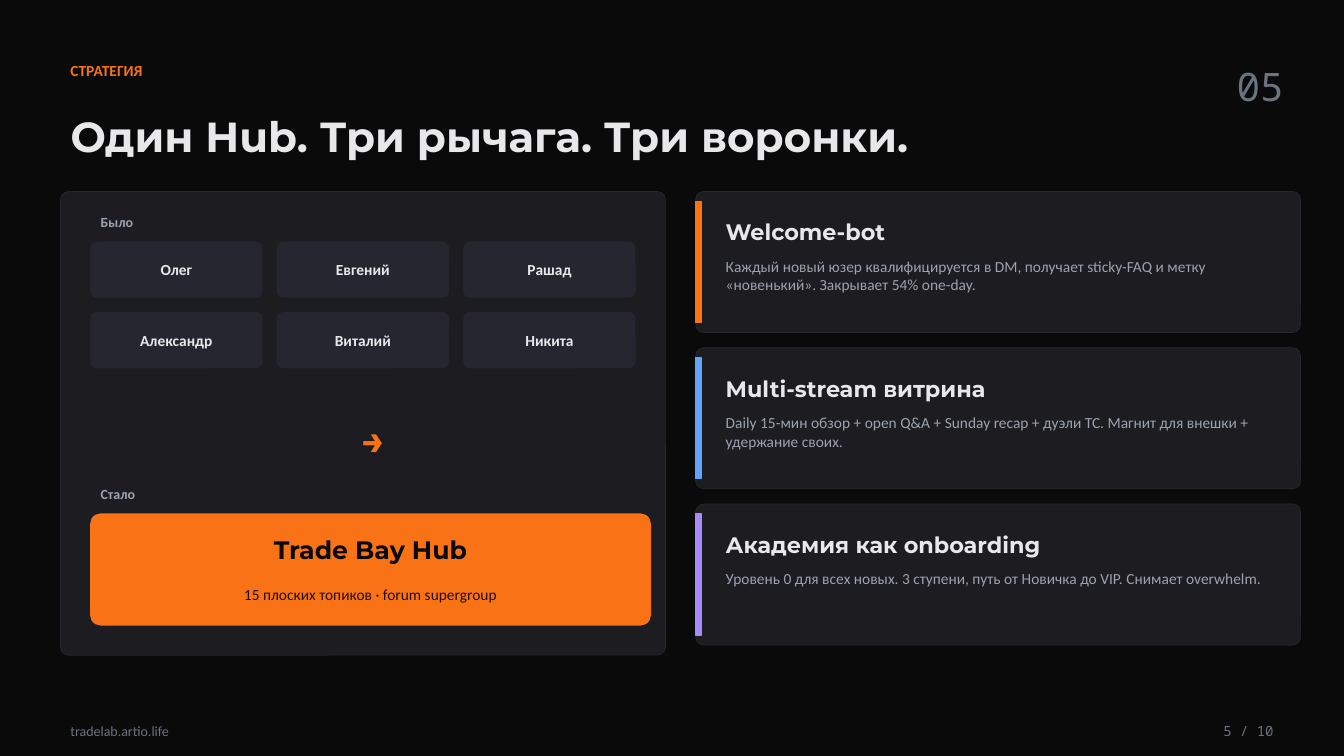
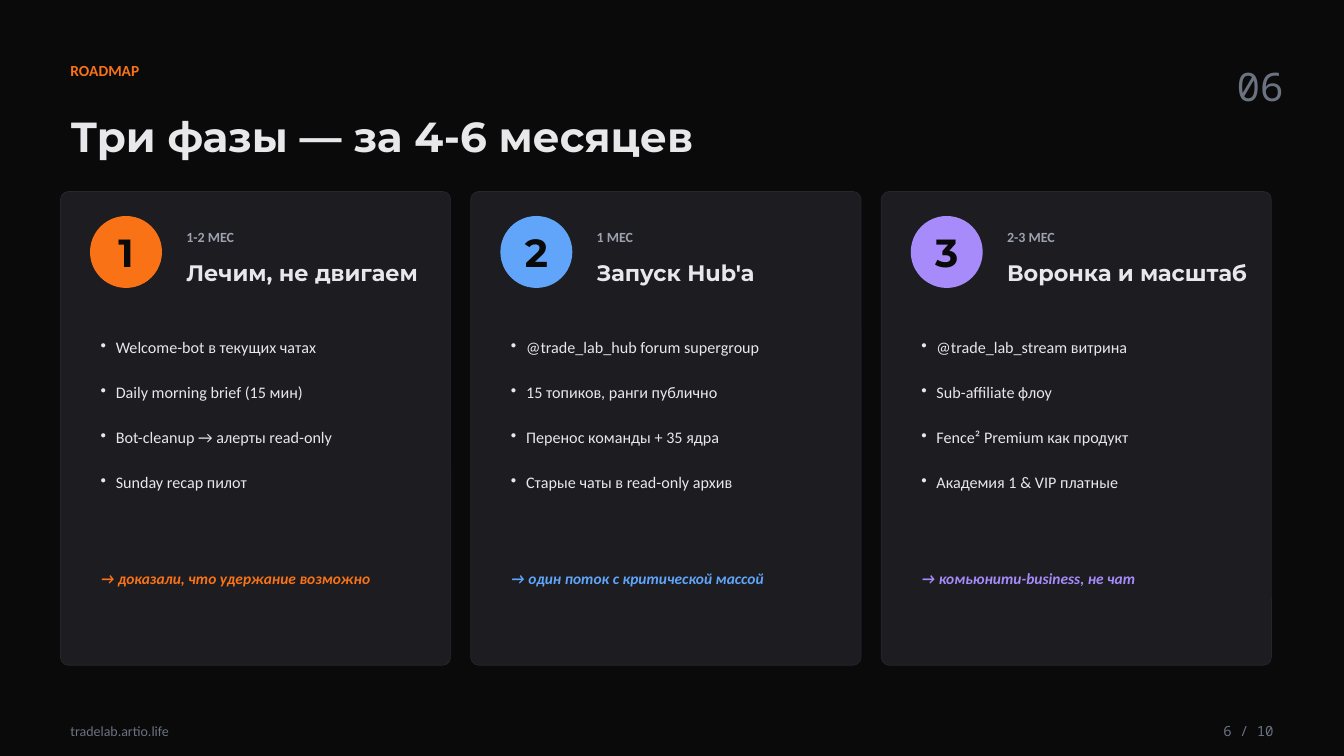
from lxml.etree import SubElement
from pptx import Presentation
from pptx.dml.color import RGBColor
from pptx.enum.shapes import MSO_SHAPE as Shape
from pptx.enum.text import MSO_ANCHOR as Anchor, MSO_AUTO_SIZE as AutoSize, PP_ALIGN as Align
from pptx.oxml.ns import qn
from pptx.util import Inches, Pt

# Shared colours and fonts
BACKGROUND = RGBColor(0x0A, 0x0A, 0x0B)
CARD = RGBColor(0x1C, 0x1C, 0x21)
CARD_LINE = RGBColor(0x26, 0x26, 0x2D)
CELL = RGBColor(0x26, 0x26, 0x31)
LIGHT = RGBColor(0xE8, 0xE8, 0xEB)
MUTED = RGBColor(0x9C, 0xA3, 0xAF)
DIM = RGBColor(0x6B, 0x72, 0x80)
BROWN = RGBColor(0x20, 0x10, 0x06)
ORANGE = RGBColor(0xF9, 0x73, 0x16)
BLUE = RGBColor(0x60, 0xA5, 0xFA)
VIOLET = RGBColor(0xA7, 0x8B, 0xFA)
ACCENTS = [ORANGE, BLUE, VIOLET]
BODY, HEADING, MONO = "Calibri", "Montserrat", "Noto Sans Mono"

# Content
SITE = "tradelab.artio.life"
PAGE_COUNT = 10
STRATEGY = {"page": 5, "label": "СТРАТЕГИЯ", "title": "Один Hub. Три рычага. Три воронки."}
ROADMAP = {"page": 6, "label": "ROADMAP", "title": "Три фазы — за 4-6 месяцев"}
PEOPLE = ["Олег", "Евгений", "Рашад", "Александр", "Виталий", "Никита"]
HUB = ("Trade Bay Hub", "15 плоских топиков · forum supergroup")
LEVERS = [
    ("Welcome-bot", "Каждый новый юзер квалифицируется в DM, получает sticky-FAQ "
     "и метку «новенький». Закрывает 54% one-day."),
    ("Multi-stream витрина", "Daily 15-мин обзор + open Q&A + Sunday recap + дуэли ТС. "
     "Магнит для внешки + удержание своих."),
    ("Академия как onboarding", "Уровень 0 для всех новых. 3 ступени, путь от Новичка до VIP. "
     "Снимает overwhelm."),
]
PHASES = [
    ("1-2 МЕС", "Лечим, не двигаем",
     ["Welcome-bot в текущих чатах", "Daily morning brief (15 мин)",
      "Bot-cleanup → алерты read-only", "Sunday recap пилот"],
     "→ доказали, что удержание возможно"),
    ("1 МЕС", "Запуск Hub'а",
     ["@trade_lab_hub forum supergroup", "15 топиков, ранги публично",
      "Перенос команды + 35 ядра", "Старые чаты в read-only архив"],
     "→ один поток с критической массой"),
    ("2-3 МЕС", "Воронка и масштаб",
     ["@trade_lab_stream витрина", "Sub-affiliate флоу",
      "Fence² Premium как продукт", "Академия 1 & VIP платные"],
     "→ комьюнити-business, не чат"),
]


def add_bullet(paragraph, indent=0.15):
    properties = paragraph._p.get_or_add_pPr()
    properties.set("marL", str(Inches(indent)))
    properties.set("indent", str(-Inches(indent)))
    SubElement(properties, qn("a:buChar")).set("char", "•")


def write_text(shape, text, size=11, color=LIGHT, font=BODY, bold=False, italic=False,
               align=Align.LEFT, anchor=Anchor.MIDDLE, bullets=False, gap=0):
    """Write a string, or a list of paragraphs, into a shape."""
    frame = shape.text_frame
    frame.word_wrap = True
    frame.auto_size = AutoSize.NONE
    frame.vertical_anchor = anchor
    lines = [text] if isinstance(text, str) else text
    for index, line in enumerate(lines):
        paragraph = frame.add_paragraph() if index else frame.paragraphs[0]
        paragraph.alignment = align
        paragraph.space_before = Pt(gap if index else 0)
        if bullets:
            add_bullet(paragraph)
        run = paragraph.add_run()
        run.text = line
        run.font.name, run.font.size = font, Pt(size)
        run.font.bold, run.font.italic = bold, italic
        run.font.color.rgb = color


def add_text(slide, text, left, top, width, height, **style):
    box = slide.shapes.add_textbox(Inches(left), Inches(top), Inches(width), Inches(height))
    write_text(box, text, **style)


def add_block(slide, kind, left, top, width, height, fill, line=None, radius=None):
    shape = slide.shapes.add_shape(kind, Inches(left), Inches(top), Inches(width), Inches(height))
    shape.shadow.inherit = False
    shape.fill.solid()
    shape.fill.fore_color.rgb = fill
    shape.line.color.rgb = line or fill
    shape.line.width = Pt(0.5 if line else 1)
    if radius:
        shape.adjustments[0] = radius / min(width, height)
    frame = shape.text_frame
    frame.margin_left = frame.margin_right = frame.margin_top = frame.margin_bottom = 0
    return shape


def add_card(slide, left, top, width, height, fill=CARD, radius=0.08):
    return add_block(slide, Shape.ROUNDED_RECTANGLE, left, top, width, height,
                     fill, CARD_LINE, radius)


def start_slide(presentation, page, label, title):
    """Title, section label, page numbers and footer."""
    slide = presentation.slides.add_slide(presentation.slide_layouts[5])
    heading = slide.shapes.title
    heading.left, heading.top = Inches(0.6), Inches(0.95)
    heading.width, heading.height = Inches(12.13), Inches(0.8)
    write_text(heading, title, size=30, font=HEADING, bold=True)
    add_text(slide, label, 0.6, 0.55, 10, 0.3, color=ORANGE, bold=True)
    add_text(slide, f"{page:02}", 12.13, 0.55, 0.7, 0.6, size=28, font=MONO, color=DIM,
             align=Align.RIGHT)
    add_text(slide, SITE, 0.6, 7.1, 4, 0.3, size=10, color=DIM)
    add_text(slide, f"{page} / {PAGE_COUNT}", 11.73, 7.1, 1, 0.3, size=10, font=MONO,
             color=DIM, align=Align.RIGHT)
    return slide


def build_strategy(presentation):
    slide = start_slide(presentation, **STRATEGY)

    # Before and after panel
    add_card(slide, 0.6, 1.9, 6, 4.6)
    for label, top in (("Было", 2.05), ("Стало", 4.75)):
        add_text(slide, label, 0.9, top, 2, 0.3, size=10, color=MUTED, bold=True)
    width, height, gap = 1.7, 0.55, 0.15
    for index, name in enumerate(PEOPLE):
        row, column = divmod(index, 3)
        cell = add_card(slide, 0.9 + column * (width + gap), 2.4 + row * (height + gap),
                        width, height, fill=CELL, radius=0.06)
        write_text(cell, name, bold=True, align=Align.CENTER)
    add_text(slide, "→", 0.9, 4.1, 5.6, 0.5, size=28, font=HEADING, color=ORANGE,
             bold=True, align=Align.CENTER)
    add_block(slide, Shape.ROUNDED_RECTANGLE, 0.9, 5.1, 5.55, 1.1, ORANGE, radius=0.1)
    name, detail = HUB
    add_text(slide, name, 0.9, 5.2, 5.55, 0.5, size=18, font=HEADING, color=BACKGROUND,
             bold=True, align=Align.CENTER)
    add_text(slide, detail, 0.9, 5.7, 5.55, 0.4, color=BROWN, align=Align.CENTER)

    # Three levers
    height, gap = 1.4, 0.15
    for index, ((name, detail), accent) in enumerate(zip(LEVERS, ACCENTS)):
        top = 1.9 + index * (height + gap)
        add_card(slide, 6.9, top, 6, height)
        add_block(slide, Shape.RECTANGLE, 6.9, top + 0.1, 0.06, height - 0.2, accent)
        add_text(slide, name, 7.1, top + 0.15, 5.7, 0.5, size=16, font=HEADING, bold=True)
        add_text(slide, detail, 7.1, top + 0.6, 5.7, 0.85, color=MUTED, anchor=Anchor.TOP)


def build_roadmap(presentation):
    slide = start_slide(presentation, **ROADMAP)
    width, gap = 3.87, 0.2
    for index, ((period, name, steps, result), accent) in enumerate(zip(PHASES, ACCENTS)):
        left = 0.6 + index * (width + gap)
        inner = left + 0.3
        add_card(slide, left, 1.9, width, 4.7)

        # Numbered heading
        badge = add_block(slide, Shape.OVAL, inner, 2.15, 0.7, 0.7, accent)
        write_text(badge, str(index + 1), size=28, font=HEADING, color=BACKGROUND, bold=True,
                   align=Align.CENTER)
        add_text(slide, period, left + 1.15, 2.2, 2.6, 0.3, size=10, color=MUTED, bold=True)
        add_text(slide, name, left + 1.15, 2.45, 2.6, 0.5, size=16, font=HEADING, bold=True)

        # Steps and result
        add_text(slide, steps, inner, 3.3, 3.4, 1.75, size=11.5, anchor=Anchor.TOP,
                 bullets=True, gap=18.4)
        add_text(slide, result, inner, 5.6, 3.4, 0.7, color=accent, bold=True, italic=True,
                 anchor=Anchor.TOP)


def main():
    presentation = Presentation()
    presentation.slide_width, presentation.slide_height = Inches(13.33), Inches(7.5)
    background = presentation.slide_master.background.fill
    background.solid()
    background.fore_color.rgb = BACKGROUND
    build_strategy(presentation)
    build_roadmap(presentation)
    presentation.save("out.pptx")


if __name__ == "__main__":
    main()
